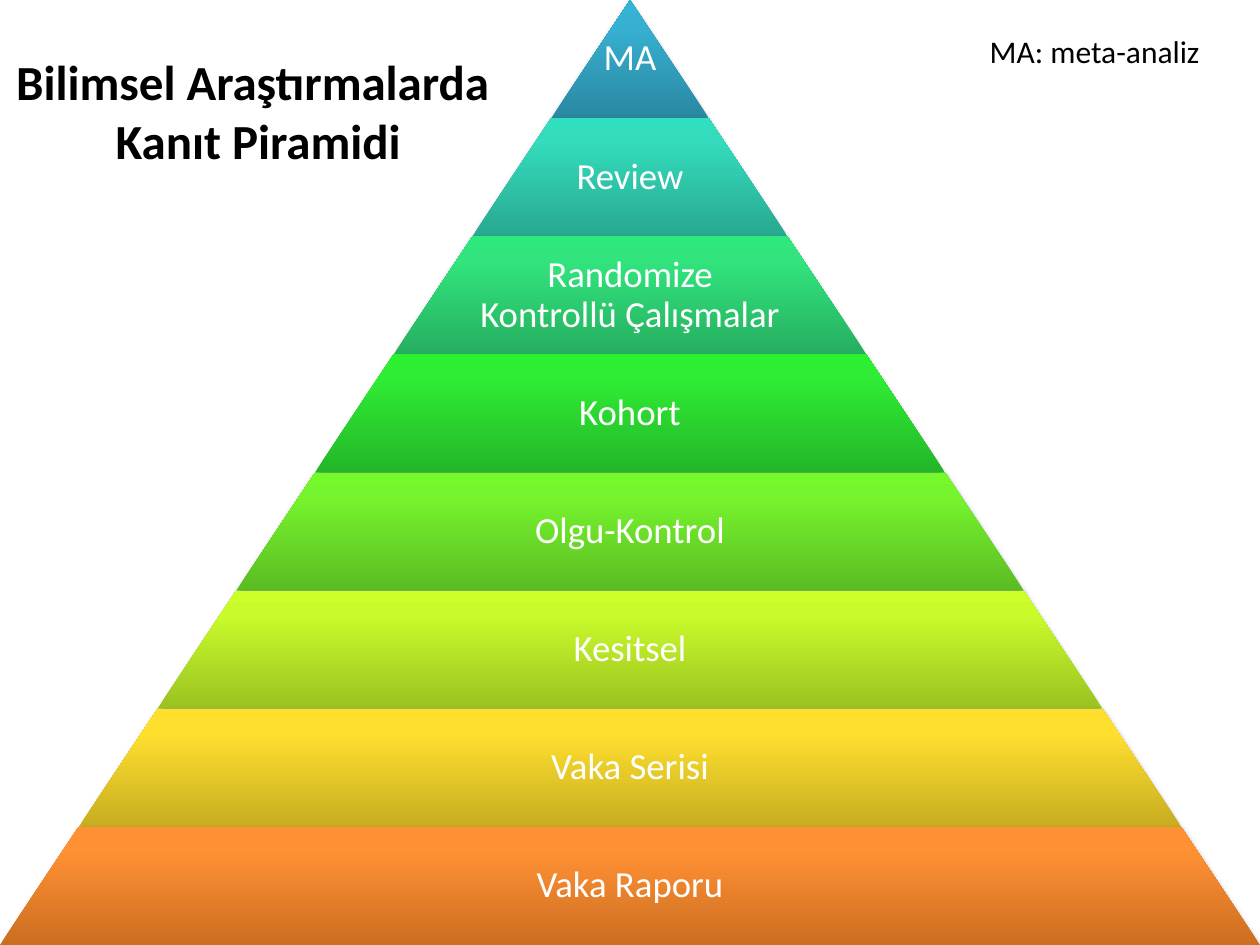
from copy import deepcopy
from lxml import etree
from pptx import Presentation
from pptx.dml.color import RGBColor
from pptx.enum import shapes, text
from pptx.oxml import ns
from pptx.util import Pt

WHITE, BLACK = RGBColor(255, 255, 255), RGBColor(0, 0, 0)
WIDTH, HEIGHT = 720, 540
LABEL_SHARE = 0.65  # label width as a share of its band

# Label, then gradient colours from the bottom of the band to its top
LEVELS = [
    ("MA", "2A88A2", "37B1D2", "34B4D6"),
    ("Review", "28A991", "34DBBC", "31DFBF"),
    ("Randomize Kontrollü Çalışmalar", "26AF60", "31E47D", "2EE87D"),
    ("Kohort", "24B628", "2FEC34", "2BF131"),
    ("Olgu-Kontrol", "5BBC23", "76F42D", "75F929"),
    ("Kesitsel", "9BC221", "C9FB2B", "CCFF29"),
    ("Vaka Serisi", "C7AD21", "FFDF2E", "FFDF2F"),
    ("Vaka Raporu", "CC6E20", "FF9034", "FF9136"),
]
STOPS = (0, 0.8, 1)
TITLE = ["Bilimsel Araştırmalarda ", "Kanıt Piramidi"]
LEGEND = ["MA: meta-analiz"]

LABEL_FONT = {"name": "Calibri", "size": Pt(21)}
LEGEND_FONT = {"name": "Calibri", "size": Pt(18)}
TITLE_FONT = {"name": "Calibri", "size": Pt(28), "bold": True}
LABEL_FRAME = {"word_wrap": True, "vertical_anchor": text.MSO_ANCHOR.MIDDLE}
LABEL_FRAME.update({f"margin_{side}": Pt(2) for side in ("left", "top", "right", "bottom")})
FREE_FRAME = {"word_wrap": False, "auto_size": text.MSO_AUTO_SIZE.SHAPE_TO_FIT_TEXT}
CENTRED = {"alignment": text.PP_ALIGN.CENTER}


def apply(target, values):
    for name, value in values.items():
        setattr(target, name, value)


def add_text(slide, box, lines, frame_values, paragraph_values, font_values, color):
    frame = slide.shapes.add_textbox(*map(Pt, box)).text_frame
    apply(frame, frame_values)
    for index, line in enumerate(lines):
        paragraph = frame.add_paragraph() if index else frame.paragraphs[0]
        apply(paragraph, paragraph_values)
        run = paragraph.add_run()
        run.text = line
        apply(run.font, font_values)
        run.font.color.rgb = color


def fill_gradient(shape, colors):
    shape.fill.gradient()
    shape.fill.gradient_angle = 90
    stop_list = shape._element.spPr.find(".//" + ns.qn("a:gsLst"))
    stop_list.append(deepcopy(stop_list[-1]))
    for stop, position, color in zip(shape.fill.gradient_stops, STOPS, colors):
        stop.position = position
        stop.color.rgb = RGBColor.from_string(color)


def add_shadow(shape):
    shape.shadow.inherit = False
    effects = shape._element.spPr.find(ns.qn("a:effectLst"))
    shadow = etree.SubElement(effects, ns.qn("a:outerShdw"), blurRad=str(Pt(3.1)),
                              dist=str(Pt(1.8)), dir="5400000", rotWithShape="0")
    color = etree.SubElement(shadow, ns.qn("a:srgbClr"), val="000000")
    etree.SubElement(color, ns.qn("a:alpha"), val="35000")


def add_level(slide, index, label, colors):
    height = HEIGHT / len(LEVELS)
    width = WIDTH * (index + 1) / len(LEVELS)
    top = index * height
    band = slide.shapes.add_shape(shapes.MSO_SHAPE.TRAPEZOID, Pt((WIDTH - width) / 2),
                                  Pt(top), Pt(width), Pt(height))
    band.adjustments[0] = WIDTH / 2 / HEIGHT
    fill_gradient(band, colors)
    band.line.fill.background()
    add_shadow(band)

    label_width = width * LABEL_SHARE if index else width
    add_text(slide, ((WIDTH - label_width) / 2, top, label_width, height), [label],
             LABEL_FRAME, {**CENTRED, "line_spacing": 0.9}, LABEL_FONT, WHITE)


def main():
    presentation = Presentation()
    presentation.slide_width, presentation.slide_height = Pt(WIDTH), Pt(HEIGHT)
    slide = presentation.slides.add_slide(presentation.slide_layouts[6])

    # Pyramid, from the tip down
    for index, (label, *colors) in enumerate(LEVELS):
        add_level(slide, index, label, colors)

    # Legend and title
    add_text(slide, (558.5, 15, 136, 29), LEGEND, FREE_FRAME, {}, LEGEND_FONT, BLACK)
    add_text(slide, (0, 26, 295, 75), TITLE, FREE_FRAME, CENTRED, TITLE_FONT, BLACK)

    presentation.save("out.pptx")


if __name__ == "__main__":
    main()
